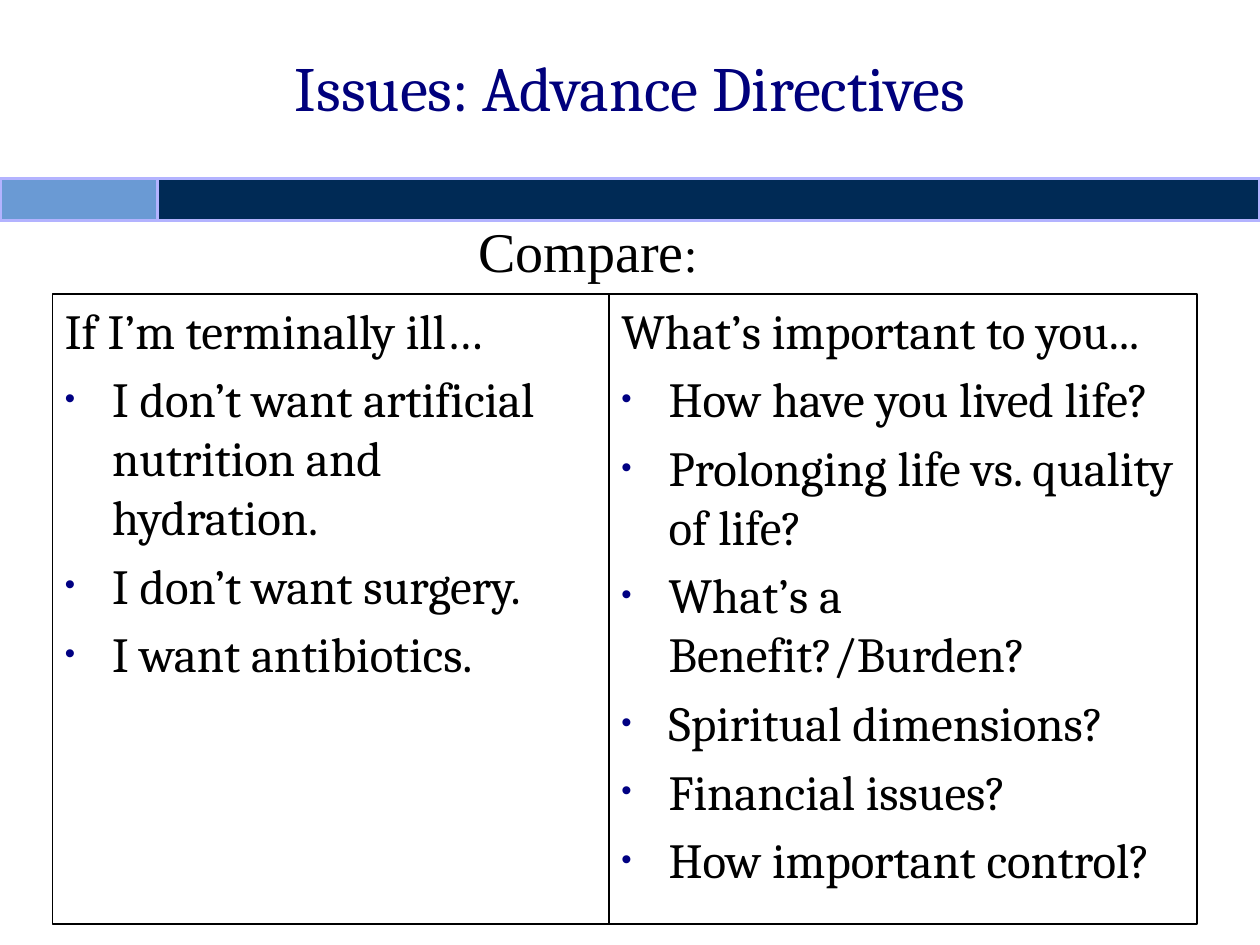
import pptx
import pptx.util
import pptx.dml.color
import pptx.enum.shapes
import pptx.enum.text
import pptx.oxml
import pptx.oxml.ns

Pt = pptx.util.Pt
Align = pptx.enum.text.PP_ALIGN
Anchor = pptx.enum.text.MSO_ANCHOR
hues = {"title": "00007C", "text": "000000", "bullet": "000082", "panel": "FFFFFF",
        "navy": "002A55", "sky": "6A9AD4", "edge": "B3B3FF"}


def add_box(left, top, width, height, fill, line, weight):
    box = slide.shapes.add_shape(pptx.enum.shapes.MSO_SHAPE.RECTANGLE,
                                 Pt(left), Pt(top), Pt(width), Pt(height))
    box.shadow.inherit = False
    box.fill.solid()
    box.fill.fore_color.rgb = pptx.dml.color.RGBColor.from_string(hues[fill])
    box.line.color.rgb = pptx.dml.color.RGBColor.from_string(hues[line])
    box.line.width = Pt(weight)
    return box


def add_run(para, text, size, face, hue):
    run = para.add_run()
    run.text = text
    run.font.size = Pt(size)
    run.font.name = face
    run.font.color.rgb = pptx.dml.color.RGBColor.from_string(hues[hue])


deck = pptx.Presentation()
deck.slide_width, deck.slide_height = Pt(720), Pt(540)
slide = deck.slides.add_slide(deck.slide_layouts[6])

title = slide.shapes.add_textbox(Pt(0), Pt(19.5), Pt(720), Pt(60)).text_frame
title.word_wrap = True
title.vertical_anchor = Anchor.MIDDLE
title.paragraphs[0].alignment = Align.CENTER
add_run(title.paragraphs[0], "Issues: Advance Directives", 36, "Cambria", "title")

panels = [
    (30, 318, "If I’m terminally ill…",
     ["I don’t want artificial nutrition and hydration.",
      "I don’t want surgery.",
      "I want antibiotics."]),
    (348, 336, "What’s important to you...",
     ["How have you lived life?",
      "Prolonging life vs. quality of life?",
      "What’s a Benefit?/Burden?",
      "Spiritual dimensions?",
      "Financial issues?",
      "How important control?"]),
]
marks = [("buClr", f'<a:srgbClr val="{hues["bullet"]}"/>', ""),
         ("buSzPct", "", 'val="60000"'),
         ("buFont", "", 'typeface="Arial"'),
         ("buChar", "", 'char="•"')]
space = pptx.oxml.ns.nsdecls("a")

for left, width, head, items in panels:
    frame = add_box(left, 168, width, 360, "panel", "text", 0.75).text_frame
    frame.word_wrap = True
    frame.vertical_anchor = Anchor.TOP
    para = frame.paragraphs[0]
    para.alignment = Align.LEFT
    add_run(para, head, 28, "Cambria", "text")
    for item in items:
        para = frame.add_paragraph()
        para.alignment = Align.LEFT
        para.space_before = Pt(5.6)
        props = para._p.get_or_add_pPr()
        props.set("marL", str(Pt(27)))
        props.set("indent", str(-Pt(27)))
        for tag, inner, attr in marks:
            props.append(pptx.oxml.parse_xml(f"<a:{tag} {space} {attr}>{inner}</a:{tag}>"))
        add_run(para, item, 28, "Cambria", "text")

label = slide.shapes.add_textbox(Pt(252), Pt(120), Pt(168), Pt(46)).text_frame
label.word_wrap = True
label.paragraphs[0].alignment = Align.CENTER
add_run(label.paragraphs[0], "Compare", 32, "Times New Roman", "text")
add_run(label.paragraphs[0], ":", 28, "Times New Roman", "text")

for left, width, fill in [(90, 630, "navy"), (0, 90, "sky")]:
    add_box(left, 102, width, 24, fill, "edge", 2)

deck.save("out.pptx")
